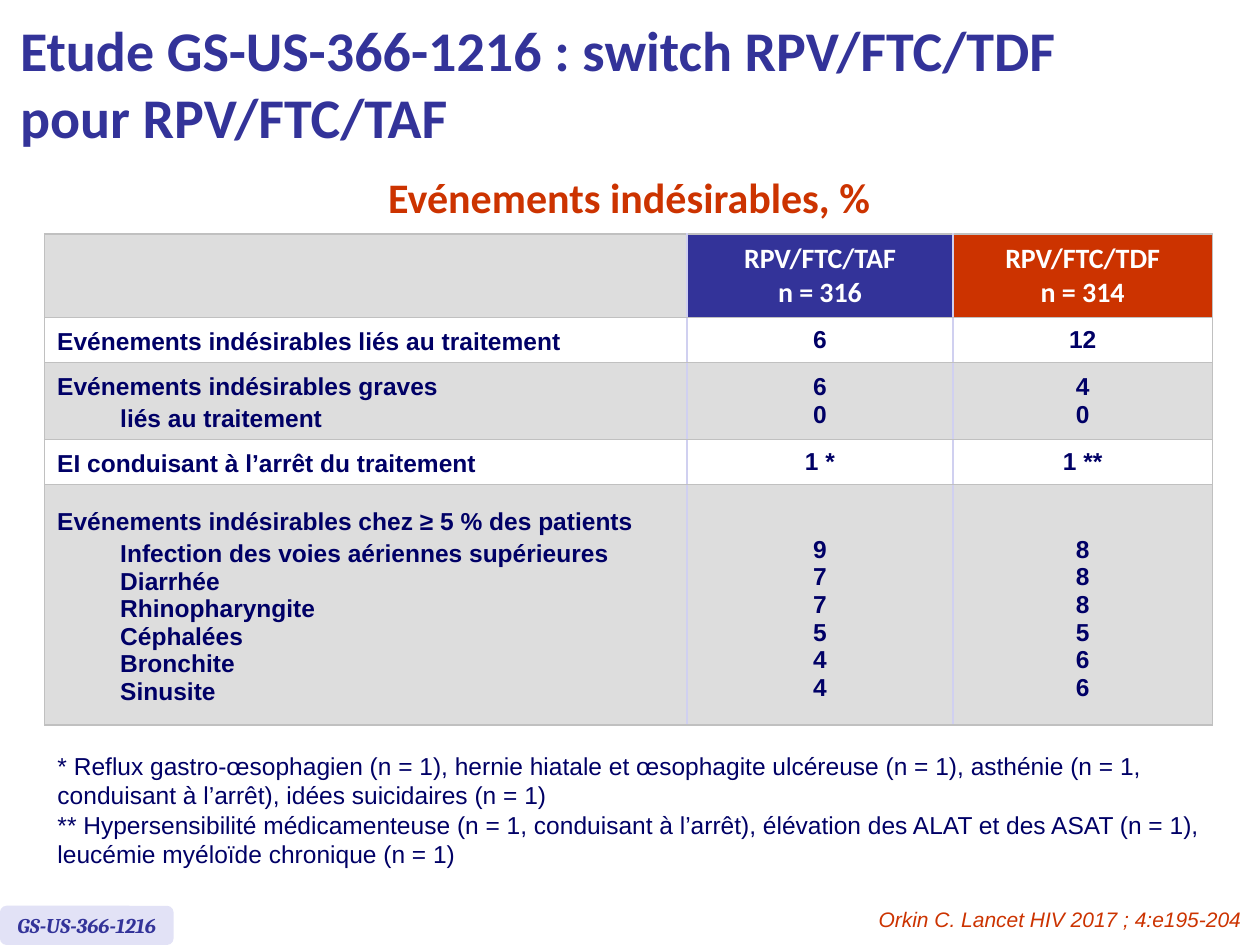
from lxml import etree
from pptx import Presentation
from pptx.dml.color import RGBColor
from pptx.enum import shapes, text
from pptx.oxml.ns import qn
from pptx.util import Cm, Pt

BLUE = RGBColor(0x33, 0x33, 0x99)
RED = RGBColor(0xCC, 0x33, 0x00)
NAVY = RGBColor(0x00, 0x00, 0x66)
WHITE = RGBColor(0xFF, 0xFF, 0xFF)
GREY = RGBColor(0xDD, 0xDD, 0xDD)
LAVENDER = RGBColor(0xE2, 0xE2, 0xF6)
OUTER_LINE = RGBColor(0xC0, 0xC0, 0xC0)
INNER_LINE = RGBColor(0xD0, 0xD0, 0xF0)

LEFT, CENTER, RIGHT = text.PP_ALIGN.LEFT, text.PP_ALIGN.CENTER, text.PP_ALIGN.RIGHT
MIDDLE = text.MSO_ANCHOR.MIDDLE

COLUMN_WIDTHS = [Cm(12.95), Cm(5.36), Cm(5.23)]
ROW_HEIGHTS = [Cm(1.68), Cm(0.91), Cm(1.55), Cm(0.91), Cm(4.85)]
ARMS = [("RPV/FTC/TAF\nn = 316", BLUE), ("RPV/FTC/TDF\nn = 314", RED)]
EVENTS = [
    ("Evénements indésirables liés au traitement", "6", "12"),
    ("Evénements indésirables graves\nliés au traitement", "6\n0", "4\n0"),
    ("EI conduisant à l’arrêt du traitement", "1 *", "1 **"),
    ("Evénements indésirables chez ≥ 5 % des patients\n"
     "Infection des voies aériennes supérieures\nDiarrhée\nRhinopharyngite\n"
     "Céphalées\nBronchite\nSinusite",
     "9\n7\n7\n5\n4\n4", "8\n8\n8\n5\n6\n6"),
]
FOOTNOTES = (
    "* Reflux gastro-œsophagien (n = 1), hernie hiatale et œsophagite ulcéreuse (n = 1), "
    "asthénie (n = 1, conduisant à l’arrêt), idées suicidaires (n = 1)\n"
    "** Hypersensibilité médicamenteuse (n = 1, conduisant à l’arrêt), élévation des ALAT "
    "et des ASAT (n = 1), leucémie myéloïde chronique (n = 1)"
)


def write(frame, content, font, size, color, align=LEFT, bold=False, italic=False):
    frame.text = content
    for paragraph in frame.paragraphs:
        paragraph.alignment = align
        for run in paragraph.runs:
            run.font.name, run.font.size = font, Pt(size)
            run.font.bold, run.font.italic = bold, italic
            run.font.color.rgb = color


def add_text(slide, box, content, *style, wrap=True, **options):
    frame = slide.shapes.add_textbox(*box).text_frame
    frame.word_wrap = wrap
    write(frame, content, *style, **options)


def add_title(slide):
    title = slide.shapes.title
    title.left, title.top, title.width, title.height = Cm(0.15), Cm(0.13), Cm(22.76), Cm(3.07)
    frame = title.text_frame
    frame.auto_size = text.MSO_AUTO_SIZE.NONE
    frame.vertical_anchor = MIDDLE
    write(frame, "Etude GS-US-366-1216 : switch RPV/FTC/TDF \vpour RPV/FTC/TAF",
          "Calibri", 32, BLUE, bold=True)


def add_study_tag(slide):
    tag = slide.shapes.add_shape(shapes.MSO_SHAPE.ROUNDED_RECTANGLE,
                                 Cm(0), Cm(18.26), Cm(3.5), Cm(0.79))
    tag.shadow.inherit = False
    tag.fill.solid()
    tag.fill.fore_color.rgb = LAVENDER
    tag.line.fill.background()
    tag.text_frame.word_wrap = False
    tag.text_frame.vertical_anchor = MIDDLE
    write(tag.text_frame, "GS-US-366-1216", "Cambria", 12, BLUE, CENTER, bold=True, italic=True)


def style_cell(cell, fill, column):
    """Fill the cell and draw its borders, lighter between columns."""
    last = len(COLUMN_WIDTHS) - 1
    sides = {
        "a:lnL": OUTER_LINE if column == 0 else INNER_LINE,
        "a:lnR": OUTER_LINE if column == last else INNER_LINE,
        "a:lnT": OUTER_LINE,
        "a:lnB": OUTER_LINE,
    }
    properties = cell._tc.get_or_add_tcPr()
    for side, color in sides.items():
        line = etree.SubElement(properties, qn(side), w=str(Pt(1)))
        solid = etree.SubElement(line, qn("a:solidFill"))
        etree.SubElement(solid, qn("a:srgbClr"), val=str(color))
    cell.fill.solid()
    cell.fill.fore_color.rgb = fill
    cell.vertical_anchor = MIDDLE


def write_event(cell, label):
    """Write the event heading with its details indented below."""
    write(cell.text_frame, label, "Arial", 14, NAVY, bold=True)
    for index, paragraph in enumerate(cell.text_frame.paragraphs):
        if index < 2:
            paragraph.line_spacing = Pt(18.2)
        if index > 0:
            paragraph.level = 1
            paragraph._p.get_or_add_pPr().set("marL", str(Cm(1.27)))


def add_events_table(slide):
    table = slide.shapes.add_table(
        len(ROW_HEIGHTS), len(COLUMN_WIDTHS), Cm(0.9), Cm(4.72),
        sum(COLUMN_WIDTHS), sum(ROW_HEIGHTS)).table
    table.first_row = table.horz_banding = False
    for column, width in zip(table.columns, COLUMN_WIDTHS):
        column.width = width
    for row, height in zip(table.rows, ROW_HEIGHTS):
        row.height = height

    style_cell(table.cell(0, 0), GREY, 0)
    for column, (arm, color) in enumerate(ARMS, 1):
        cell = table.cell(0, column)
        style_cell(cell, color, column)
        write(cell.text_frame, arm, "Calibri", 16, WHITE, CENTER, bold=True)

    for row, (label, *rates) in enumerate(EVENTS, 1):
        fill = WHITE if row % 2 else GREY
        style_cell(table.cell(row, 0), fill, 0)
        write_event(table.cell(row, 0), label)
        for column, rate in enumerate(rates, 1):
            cell = table.cell(row, column)
            style_cell(cell, fill, column)
            write(cell.text_frame, rate, "Arial", 14, NAVY, CENTER, bold=True)
            if row == len(EVENTS):  # the heading line has no rate of its own
                cell.vertical_anchor = text.MSO_ANCHOR.BOTTOM
                cell.margin_bottom = Cm(0.48)


def main():
    deck = Presentation()
    deck.slide_width, deck.slide_height = Cm(25.4), Cm(19.05)
    slide = deck.slides.add_slide(deck.slide_layouts[5])
    add_title(slide)
    add_events_table(slide)
    add_text(slide, (Cm(0.91), Cm(15.01), Cm(23.98), Cm(2.64)), FOOTNOTES, "Arial", 14, NAVY)
    add_study_tag(slide)
    add_text(slide, (Cm(13.49), Cm(18.16), Cm(11.79), Cm(0.76)),
             "Orkin C. Lancet HIV 2017 ; 4:e195-204", "Arial", 12, RED, RIGHT, italic=True)
    add_text(slide, (Cm(7.49), Cm(3.33), Cm(10.39), Cm(1.27)),
             "Evénements indésirables, %", "Calibri", 24, RED, CENTER, wrap=False, bold=True)
    deck.save("out.pptx")


if __name__ == "__main__":
    main()
